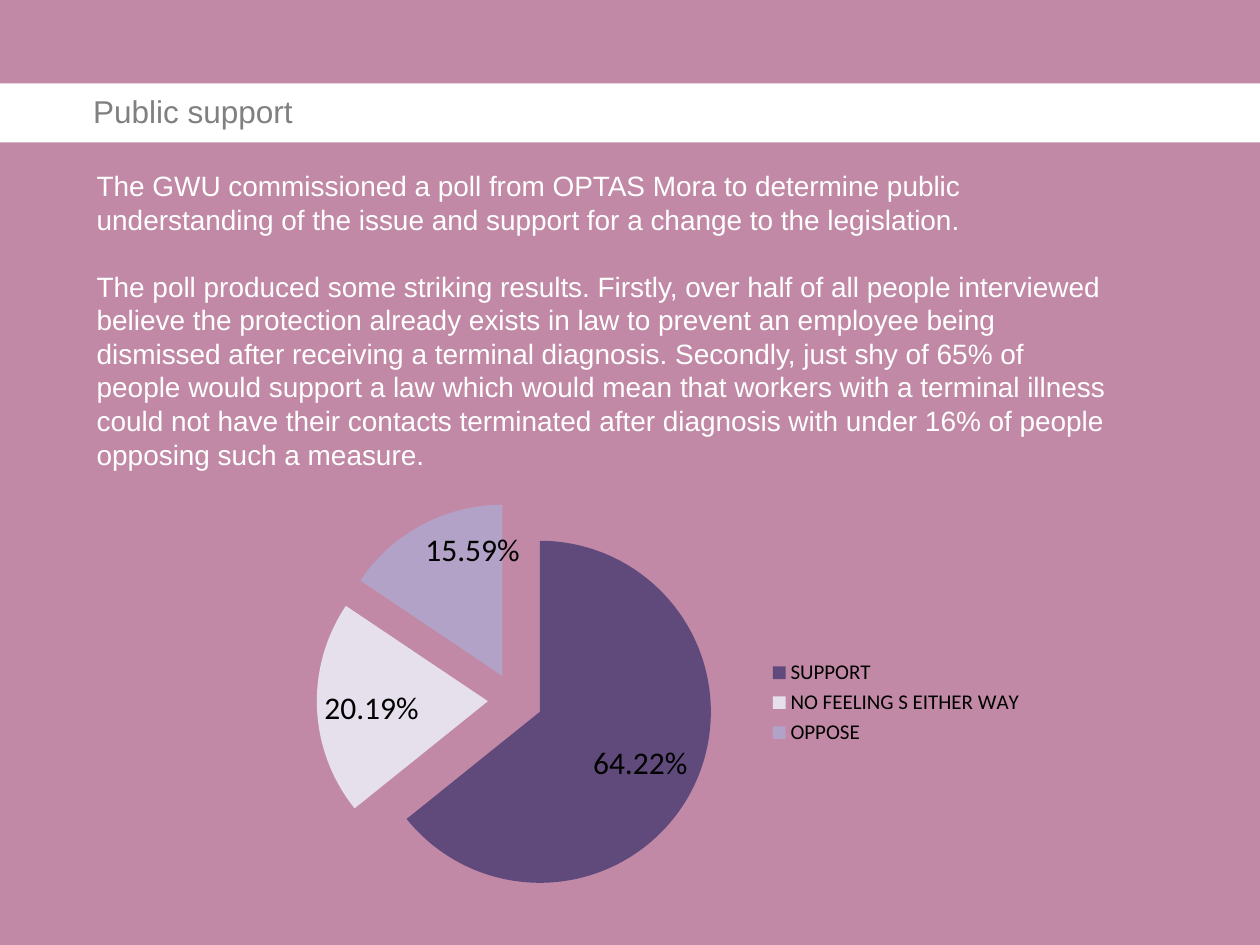
from lxml import etree
from pptx import Presentation
from pptx import util as u
from pptx.chart.data import CategoryChartData
from pptx.dml.color import RGBColor
from pptx.enum import chart as ch, shapes
from pptx.oxml.ns import qn


def rgb(value):
    return RGBColor.from_string(value)


def add_text(box, paragraphs, size, color, gap=0):
    tf = s.shapes.add_textbox(*map(u.Cm, box)).text_frame
    tf.word_wrap = True
    for i, line in enumerate(paragraphs):
        p = tf.paragraphs[0] if i == 0 else tf.add_paragraph()
        p.text = line
        p.font.name = "Arial"
        p.font.size = u.Pt(size)
        p.font.color.rgb = rgb(color)
        if i:
            p.space_before = u.Pt(gap)


prs = Presentation()
prs.slide_width, prs.slide_height = u.Cm(25.4), u.Cm(19.05)
s = prs.slides.add_slide(prs.slide_layouts[6])

for top, height, color in [(-1.07, 20.4, "C189A6"), (1.68, 1.19, "FFFFFF")]:
    sp = s.shapes.add_shape(shapes.MSO_SHAPE.RECTANGLE, u.Cm(-0.51), u.Cm(top), u.Cm(26.21), u.Cm(height))
    sp.shadow.inherit = False
    sp.fill.solid()
    sp.fill.fore_color.rgb = rgb(color)
    sp.line.fill.background()

add_text((1.63, 1.73, 11.89, 1.02), ["Public support"], 18, "808080")
add_text((1.7, 3.28, 21, 8.64), [
    "The GWU commissioned a poll from OPTAS Mora to determine public "
    "understanding of the issue and support for a change to the legislation.",
    "The poll produced some striking results. Firstly, over half of all people interviewed "
    "believe the protection already exists in law to prevent an employee being dismissed "
    "after receiving a terminal diagnosis. Secondly, just shy of 65% of people would support "
    "a law which would mean that workers with a terminal illness could not have their contacts "
    "terminated after diagnosis with under 16% of people opposing such a measure.",
], 16, "FFFFFF", gap=19)

data = CategoryChartData(number_format="0.00%")
data.categories = ["SUPPORT", "NO FEELING S EITHER WAY", "OPPOSE"]
data.add_series("Series 1", [0.6422, 0.2019, 0.1559])
chart = s.shapes.add_chart(ch.XL_CHART_TYPE.PIE, u.Cm(4.85), u.Cm(8.97), u.Cm(16.05), u.Cm(10.39), data).chart
chart.has_title = False
chart.font.name = "Calibri"
chart.font.size = u.Pt(10)
chart.font.color.rgb = rgb("000000")
chart.has_legend = True
chart.legend.position = ch.XL_LEGEND_POSITION.RIGHT
chart.legend.include_in_layout = False
chart.legend.font.size = u.Pt(12)

plot = chart.plots[0]
plot.vary_by_categories = True
series = plot.series[0]
for i, color in enumerate(["604A7B", "E6E0EC", "B3A2C7"]):
    fill = series.points[i].format.fill
    fill.solid()
    fill.fore_color.rgb = rgb(color)

labels = series.data_labels
labels.show_value = True
labels.number_format = "0.00%"
labels.number_format_is_linked = False
labels.position = ch.XL_LABEL_POSITION.INSIDE_END
labels.font.size = u.Pt(18)

explosion = etree.Element(qn("c:explosion"), val="16")
series._element.find(qn("c:dPt")).addprevious(explosion)

area = chart._chartSpace.find(".//" + qn("c:plotArea"))
for old in area.findall(qn("c:layout")):
    area.remove(old)
layout = etree.Element(qn("c:layout"))
area.insert(0, layout)
manual = etree.SubElement(layout, qn("c:manualLayout"))
for tag, val in [("layoutTarget", "inner"), ("xMode", "edge"), ("yMode", "edge"),
                 ("x", "0.07"), ("y", "0.11"), ("w", "0.55"), ("h", "0.77")]:
    etree.SubElement(manual, qn("c:" + tag), val=val)

prs.save("out.pptx")
